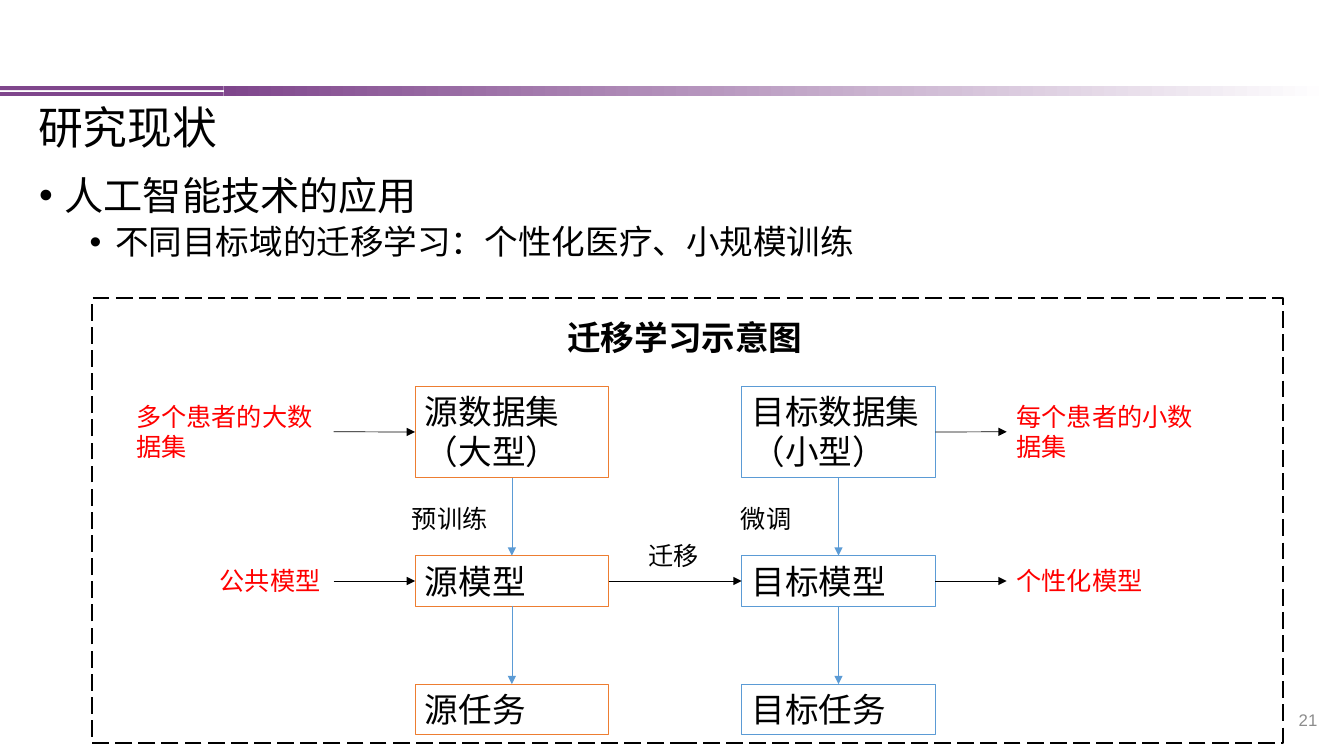
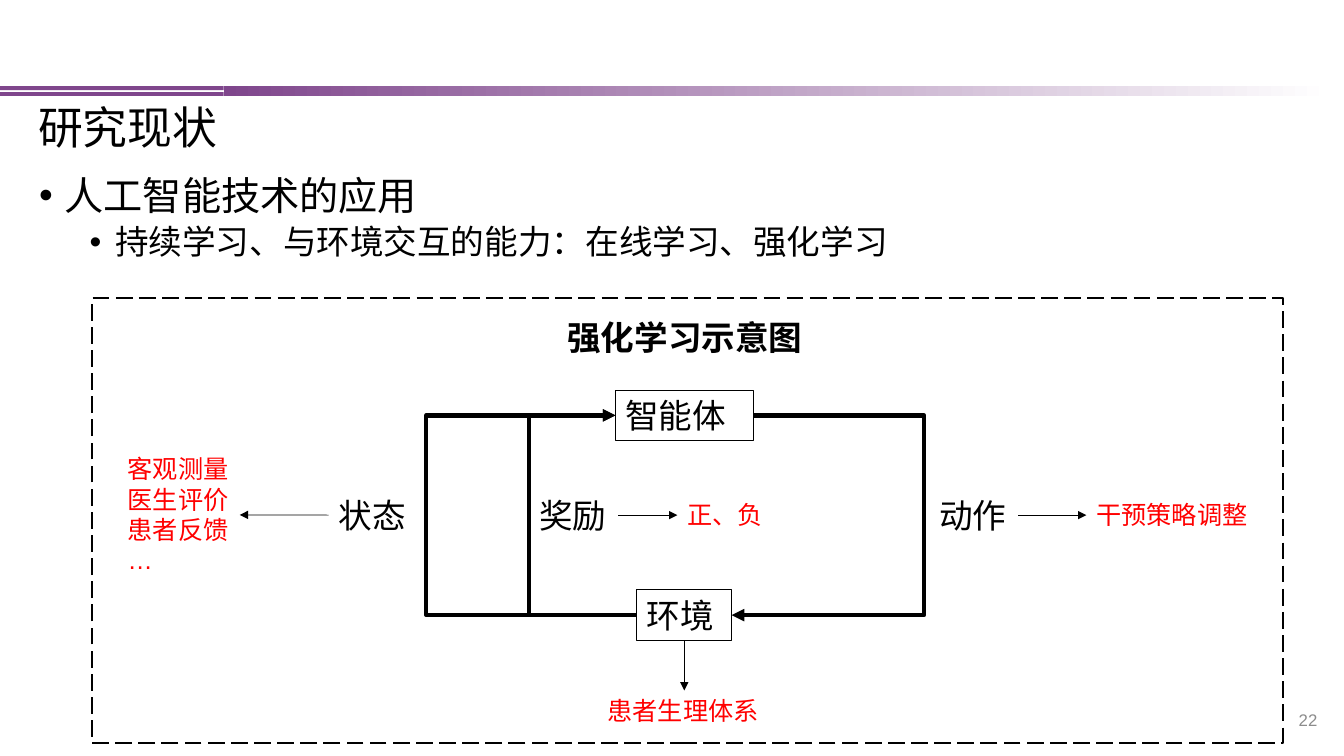
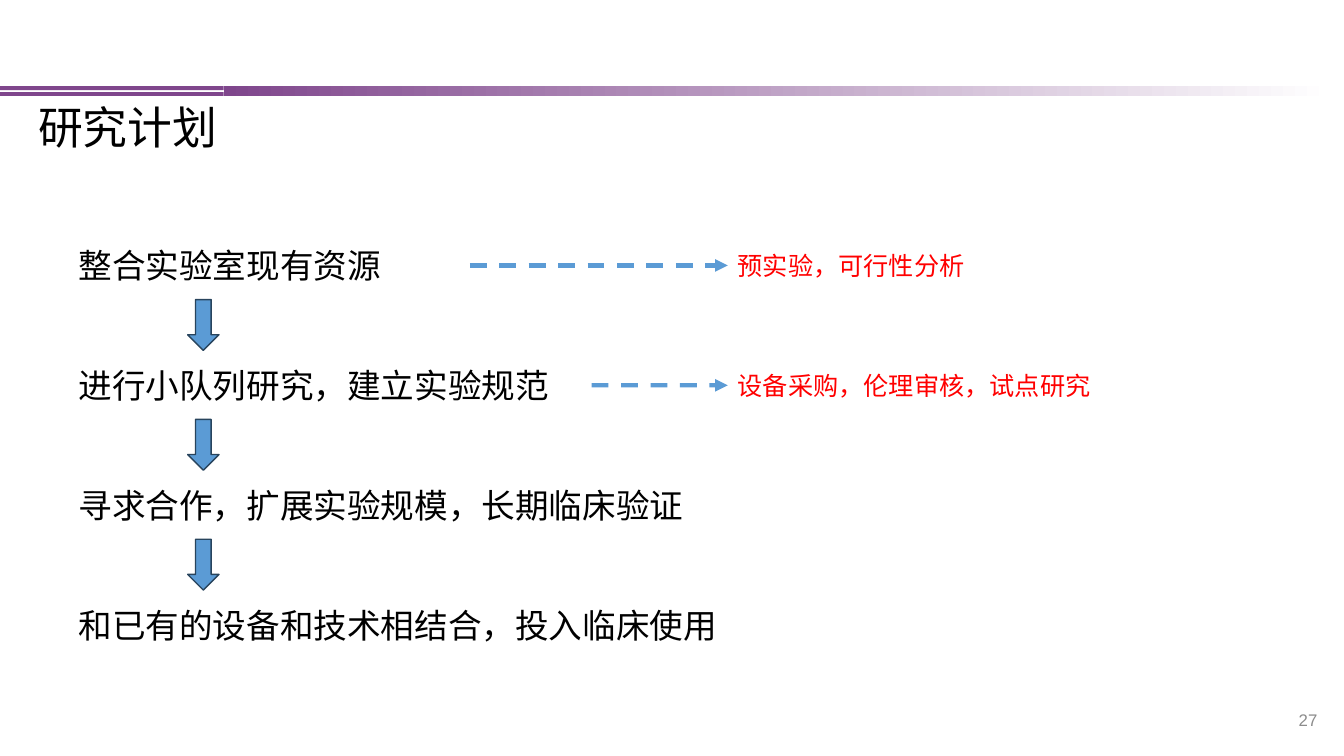
from dataclasses import dataclass

from lxml import etree
from pptx import Presentation
from pptx.dml.color import RGBColor
from pptx.enum.dml import MSO_LINE
from pptx.enum.shapes import MSO_CONNECTOR, MSO_SHAPE
from pptx.enum.text import MSO_ANCHOR, PP_ALIGN
from pptx.oxml.ns import qn
from pptx.util import Cm, Pt

FONT = "Arial"
BLACK, WHITE, RED, GREY = "000000", "FFFFFF", "FF0000", "8C8C8C"
PURPLE, ORANGE, BLUE, NAVY = "7F468C", "ED7D31", "5B9BD5", "28445D"
TOP, LEFT, BOTTOM, RIGHT = range(4)
LINE_H, NOTE_H = 1.28, 1.02


@dataclass
class Box:
    """A region in centimetres."""
    x: float
    y: float
    w: float
    h: float

    def inner(self, x, y, w, h):
        return Box(self.x + x, self.y + y, w, h)

    def lengths(self):
        return [Cm(round(value, 2)) for value in (self.x, self.y, self.w, self.h)]


PANEL = Box(2.31, 7.52, 30.02, 11.2)
STEPS = Box(1.73, 6.05, 28, 10.34)


def rgb(hex_text):
    return RGBColor.from_string(hex_text)


def write(shape, text, size, color=BLACK, bold=False, wrap=True,
          anchor=MSO_ANCHOR.TOP, align=PP_ALIGN.LEFT):
    frame = shape.text_frame
    frame.text = text
    frame.word_wrap = wrap
    frame.vertical_anchor = anchor
    for paragraph in frame.paragraphs:
        paragraph.alignment = align
        font = paragraph.font
        font.name, font.size, font.bold = FONT, Pt(size), bold
        font.color.rgb = rgb(color)
    return shape


def label(slide, box, text, size=24, color=BLACK, **style):
    return write(slide.shapes.add_textbox(*box.lengths()), text, size, color, **style)


def note(slide, box, text, wrap=False):
    return label(slide, box, text, 18, RED, wrap=wrap)


def block(slide, box, fill=None, line=None, width=0.75, kind=MSO_SHAPE.RECTANGLE):
    shape = slide.shapes.add_shape(kind, *box.lengths())
    shape.shadow.inherit = False
    if fill:
        shape.fill.solid()
        shape.fill.fore_color.rgb = rgb(fill)
    else:
        shape.fill.background()
    if line:
        shape.line.color.rgb = rgb(line)
        shape.line.width = Pt(width)
    else:
        shape.line.fill.background()
    return shape


def arrow(slide, start, start_side, end, end_side, color=BLACK, width=0.5,
          dash=None, turn=None):
    """Join two shapes; with turn, bend at that horizontal position in cm."""
    kind = MSO_CONNECTOR.STRAIGHT if turn is None else MSO_CONNECTOR.ELBOW
    link = slide.shapes.add_connector(kind, 0, 0, 0, 0)
    link.begin_connect(start, start_side)
    link.end_connect(end, end_side)
    link.line.color.rgb = rgb(color)
    link.line.width = Pt(width)
    if dash:
        link.line.dash_style = dash
    properties = link.element.spPr
    etree.SubElement(properties.find(qn("a:ln")), qn("a:tailEnd"), type="triangle")
    etree.SubElement(properties, qn("a:effectLst"))
    if turn is not None:
        share = (Cm(turn) - link.begin_x) / (link.end_x - link.begin_x)
        guides = properties.find(qn("a:prstGeom")).get_or_add_avLst()
        etree.SubElement(guides, qn("a:gd"), name="adj1",
                         fmla=f"val {round(share * 100000)}")


def header_band(slide, layout):
    """Draw the purple band and hand it to the layout that all slides share."""
    stripes = [block(slide, Box(0, y, 5.64, 0.1), PURPLE) for y in (2.17, 2.32)]
    fade = block(slide, Box(5.64, 2.16, 27.89, 0.27))
    fade.fill.gradient()
    fade.fill.gradient_angle = 0
    for stop, color, position in zip(fade.fill.gradient_stops, (PURPLE, WHITE), (0, 1)):
        stop.color.rgb = rgb(color)
        stop.position = position
    for part in (*stripes, fade):
        layout.shapes.element.append(part.element)


def title_and_number(slide, title, number):
    heading = label(slide, Box(0.71, 2.62, 32.41, 1.4), title, 32,
                    anchor=MSO_ANCHOR.BOTTOM)
    heading.text_frame.paragraphs[0].line_spacing = 0.9
    label(slide, Box(32.33, 17.63, 1.12, NOTE_H), number, 12, GREY,
          anchor=MSO_ANCHOR.MIDDLE, align=PP_ALIGN.RIGHT)


def bullets(slide, box, topic, detail):
    frame = slide.shapes.add_textbox(*box.lengths()).text_frame
    frame.word_wrap = True
    frame.text = f"{topic}\n{detail}"
    levels = ((28, 0.64, 0), (24, 1.91, 5))
    for level, (paragraph, (size, indent, before)) in enumerate(
            zip(frame.paragraphs, levels)):
        properties = paragraph._p.get_or_add_pPr()
        properties.set("marL", str(Cm(indent)))
        properties.set("indent", str(Cm(-0.64)))
        etree.SubElement(properties, qn("a:buFont"), typeface=FONT)
        etree.SubElement(properties, qn("a:buChar"), char="•")
        paragraph.level = level
        paragraph.line_spacing = 0.9
        paragraph.space_before = Pt(before)
        paragraph.font.name, paragraph.font.size = FONT, Pt(size)
        paragraph.font.color.rgb = rgb(BLACK)


def panel_frame(slide, box, heading):
    block(slide, box, line=BLACK, width=1.5).line.dash_style = MSO_LINE.LONG_DASH
    width = 6.53
    label(slide, box.inner((box.w - width) / 2, 0.35, width, LINE_H), heading,
          bold=True, wrap=False)


def transfer_diagram(slide, box):
    gap, box_w = 1.96, 4.88
    columns = (
        (8.15, ORANGE, ("源数据集\n（大型）", "源模型", "源任务")),
        (16.38, BLUE, ("目标数据集\n（小型）", "目标模型", "目标任务")),
    )
    heights = (2.31, LINE_H, LINE_H)
    tops = [2.21 + sum(heights[:row]) + gap * row for row in range(3)]
    chains = []
    for x, color, names in columns:
        chain = [write(block(slide, box.inner(x, y, box_w, h), line=color), name, 24)
                 for y, h, name in zip(tops, heights, names)]
        for upper, lower in zip(chain, chain[1:]):
            arrow(slide, upper, BOTTOM, lower, TOP, BLUE)
        chains.append(chain)
    source, target = chains
    arrow(slide, source[1], RIGHT, target[1], LEFT)

    remarks = (
        (0, 5.23, 5.23, 1.8, "多个患者的大数据集", "每个患者的小数据集"),
        (1, 3.12, 3.76, NOTE_H, "公共模型", "个性化模型"),
    )
    for row, left_w, right_w, h, origin, result in remarks:
        y = tops[row] + (heights[row] - h) / 2
        wrap = row == 0
        before = note(slide, box.inner(6.1 - left_w, y, left_w, h), origin, wrap)
        after = note(slide, box.inner(23.06, y, right_w, h), result, wrap)
        arrow(slide, before, RIGHT, source[row], LEFT)
        arrow(slide, target[row], RIGHT, after, LEFT)

    for x, y, w, action in ((7.82, 5.03, 2.44, "预训练"), (16.11, 5.03, 1.8, "微调"),
                            (13.79, 5.97, 1.8, "迁移")):
        label(slide, box.inner(x, y, w, NOTE_H), action, 18, wrap=False)


def reinforcement_diagram(slide, box):
    center, middle = 14.94, 5.46

    def actor(y, w, name):
        place = box.inner(center - w / 2, y, w, LINE_H)
        return write(block(slide, place, line=BLACK), name, 24)

    def signal(x, name):
        place = box.inner(x, middle - LINE_H / 2, 2.24, LINE_H)
        return label(slide, place, name, wrap=False)

    def remark(x, w, text, h=NOTE_H):
        return note(slide, box.inner(x, middle - h / 2, w, h), text)

    agent = actor(2.31, 3.48, "智能体")
    environment = actor(7.34, 2.39, "环境")
    state_x, reward_x, action_x = 8.43, 11.03, 20.98
    for x in (state_x, reward_x):
        arrow(slide, environment, LEFT, agent, LEFT, width=3, turn=box.x + x)
    arrow(slide, agent, RIGHT, environment, RIGHT, width=3, turn=box.x + action_x)

    state = signal(5.97, "状态")
    reward = signal(reward_x, "奖励")
    action = signal(21.11, "动作")
    feedback = remark(0.66, 3.07, "客观测量\n医生评价\n患者反馈\n…", 3.33)
    arrow(slide, state, LEFT, feedback, RIGHT)
    arrow(slide, reward, RIGHT, remark(14.76, 2.44, "正、负"), LEFT)
    arrow(slide, action, RIGHT, remark(25.07, 4.37, "干预策略调整"), LEFT)
    body = note(slide, box.inner(center - 4.37 / 2, 9.88, 4.37, NOTE_H), "患者生理体系")
    arrow(slide, environment, BOTTOM, body, TOP)


def plan_steps(slide, box):
    pitch = 3.02
    steps = (
        (10.11, "整合实验室现有资源", 6.48, "预实验，可行性分析"),
        (13.18, "进行小队列研究，建立实验规范", 9.5, "设备采购，伦理审核，试点研究"),
        (17.88, "寻求合作，扩展实验规模，长期临床验证", 0, ""),
        (17.5, "和已有的设备和技术相结合，投入临床使用", 0, ""),
    )
    for index, (step_w, text, work_w, work) in enumerate(steps):
        y = index * pitch
        step = label(slide, box.inner(0, y, step_w, LINE_H), text)
        if work:
            place = box.inner(16.61, y + (LINE_H - NOTE_H) / 2, work_w, NOTE_H)
            arrow(slide, step, RIGHT, note(slide, place, work), LEFT, BLUE, 3,
                  MSO_LINE.DASH)
        if index < len(steps) - 1:
            block(slide, box.inner(3, y + 1.5, 0.79, 1.28), BLUE, NAVY, 1,
                  MSO_SHAPE.DOWN_ARROW)


def status_slide(slide, number, detail, heading, diagram):
    title_and_number(slide, "研究现状", number)
    bullets(slide, Box(0.74, 4.32, 32.41, 3), "人工智能技术的应用", detail)
    panel_frame(slide, PANEL, heading)
    diagram(slide, PANEL)


def plan_slide(slide, number):
    title_and_number(slide, "研究计划", number)
    plan_steps(slide, STEPS)


def main():
    deck = Presentation()
    deck.slide_width, deck.slide_height = Cm(33.87), Cm(19.05)
    blank = deck.slide_layouts[6]
    transfer, reinforcement, plan = [deck.slides.add_slide(blank) for _ in range(3)]
    header_band(transfer, blank)
    status_slide(transfer, "21", "不同目标域的迁移学习：个性化医疗、小规模训练",
                 "迁移学习示意图", transfer_diagram)
    status_slide(reinforcement, "22", "持续学习、与环境交互的能力：在线学习、强化学习",
                 "强化学习示意图", reinforcement_diagram)
    plan_slide(plan, "27")
    deck.save("out.pptx")


if __name__ == "__main__":
    main()
